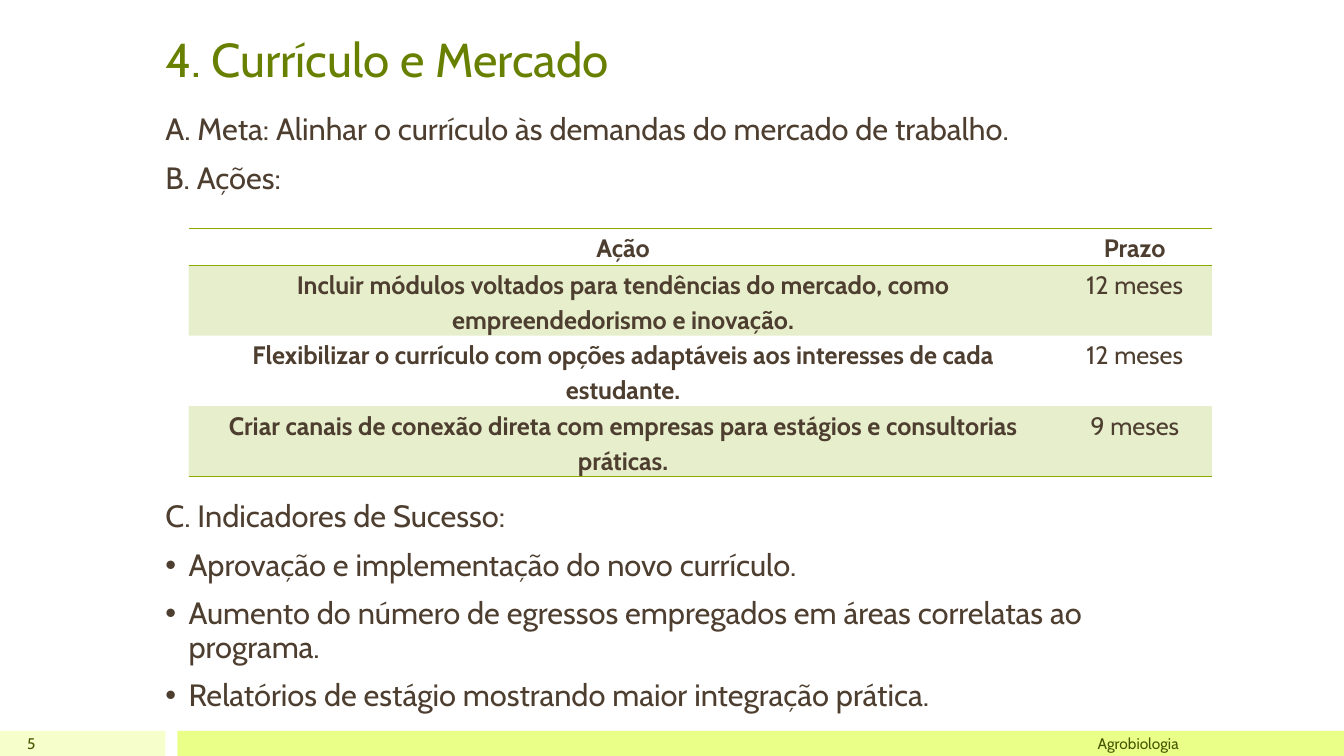
from dataclasses import dataclass

import lxml.etree
import pptx
import pptx.dml.color
import pptx.enum.shapes
import pptx.enum.text
import pptx.oxml.ns
import pptx.util

Inches = pptx.util.Inches
Pt = pptx.util.Pt
Align = pptx.enum.text.PP_ALIGN
Anchor = pptx.enum.text.MSO_ANCHOR
qn = pptx.oxml.ns.qn

FONT = "Cabin"
COLORS = {
    "title": "688000",
    "text": "4D3E2F",
    "footer": "455500",
    "rule": "8BAA00",
    "pale_bar": "F6FFCC",
    "bright_bar": "E9FF88",
}
NO_TABLE_STYLE = "{2D5ABB26-0587-4C30-8999-92F81FD0307C}"
FOOTER_TOP, FOOTER_HEIGHT = 7.25, 0.25


@dataclass
class FooterBar:
    left: float
    width: float
    color: str


@dataclass
class FooterLabel:
    text: str
    left: float
    width: float


@dataclass
class BodyLine:
    text: str
    bullet: bool = False
    space_before: float = 11


FOOTER_BARS = [FooterBar(0, 1.64, "pale_bar"), FooterBar(1.76, 11.57, "bright_bar")]
FOOTER_LABELS = [FooterLabel("5", 0, 0.45), FooterLabel("Agrobiologia", 1.79, 10)]
BODY_LINES = [
    BodyLine("A. Meta: Alinhar o currículo às demandas do mercado de trabalho."),
    BodyLine("B. Ações:"),
    BodyLine("C. Indicadores de Sucesso:", space_before=218),  # room for the table
    BodyLine("Aprovação e implementação do novo currículo.", bullet=True),
    BodyLine("Aumento do número de egressos empregados em áreas correlatas ao programa.", bullet=True),
    BodyLine("Relatórios de estágio mostrando maior integração prática.", bullet=True),
]
ACTION_ROWS = [
    ("Ação", "Prazo"),
    ("Incluir módulos voltados para tendências do mercado, como empreendedorismo e inovação.", "12 meses"),
    ("Flexibilizar o currículo com opções adaptáveis aos interesses de cada estudante.", "12 meses"),
    ("Criar canais de conexão direta com empresas para estágios e consultorias práticas.", "9 meses"),
]
COLUMN_WIDTHS = (8.62, 1.53)
HEADER_HEIGHT, ACTION_HEIGHT = 0.36, 0.7


def rgb(color: str) -> pptx.dml.color.RGBColor:
    return pptx.dml.color.RGBColor.from_string(COLORS[color])


def place(shape, left: float, top: float, width: float, height: float) -> None:
    shape.left, shape.top = Inches(left), Inches(top)
    shape.width, shape.height = Inches(width), Inches(height)


def add_run(paragraph, text: str, size: float, color: str, bold: bool = False) -> None:
    run = paragraph.add_run()
    run.text = text
    run.font.name = FONT
    run.font.size = Pt(size)
    run.font.bold = bold
    run.font.color.rgb = rgb(color)


def set_bullet(paragraph, bullet: bool) -> None:
    properties = paragraph._p.get_or_add_pPr()
    indent = Inches(0.23) if bullet else 0
    properties.set("marL", str(indent))
    properties.set("indent", str(-indent))
    if bullet:
        lxml.etree.SubElement(properties, qn("a:buFont"), typeface="Arial")
        lxml.etree.SubElement(properties, qn("a:buChar"), char="•")
    else:
        lxml.etree.SubElement(properties, qn("a:buNone"))


def add_rule(cell, side: str) -> None:
    """Draw the cell's border on one side: "T" or "B"."""
    line = lxml.etree.SubElement(cell._tc.get_or_add_tcPr(), qn(f"a:ln{side}"), w=str(Pt(1)))
    fill = lxml.etree.SubElement(line, qn("a:solidFill"))
    lxml.etree.SubElement(fill, qn("a:srgbClr"), val=COLORS["rule"])


def tint_cell(cell) -> None:
    """Fill the cell with the rule colour at 20% opacity."""
    cell.fill.solid()
    cell.fill.fore_color.rgb = rgb("rule")
    tint = cell._tc.tcPr.find(qn("a:solidFill")).find(qn("a:srgbClr"))
    lxml.etree.SubElement(tint, qn("a:alpha"), val="20000")


def add_footer_bar(slide, bar: FooterBar) -> None:
    strip = slide.shapes.add_shape(
        pptx.enum.shapes.MSO_SHAPE.RECTANGLE,
        Inches(bar.left), Inches(FOOTER_TOP), Inches(bar.width), Inches(FOOTER_HEIGHT))
    strip.shadow.inherit = False
    strip.fill.solid()
    strip.fill.fore_color.rgb = rgb(bar.color)
    strip.line.fill.background()


def add_footer_label(slide, label: FooterLabel) -> None:
    frame = slide.shapes.add_textbox(
        Inches(label.left), Inches(FOOTER_TOP), Inches(label.width), Inches(FOOTER_HEIGHT)).text_frame
    frame.word_wrap = True
    frame.vertical_anchor = Anchor.MIDDLE
    frame.paragraphs[0].alignment = Align.RIGHT
    add_run(frame.paragraphs[0], label.text, 11, "footer")


def fill_title(title) -> None:
    place(title, 1.54, 0.22, 4.73, 0.69)
    frame = title.text_frame
    frame.auto_size = pptx.enum.text.MSO_AUTO_SIZE.NONE
    frame.vertical_anchor = Anchor.BOTTOM
    frame.paragraphs[0].alignment = Align.LEFT
    add_run(frame.paragraphs[0], "4. Currículo e Mercado", 34, "title")


def fill_body(body) -> None:
    place(body, 1.54, 1.08, 10.25, 5.05)
    frame = body.text_frame
    frame.auto_size = pptx.enum.text.MSO_AUTO_SIZE.NONE
    frame.vertical_anchor = Anchor.TOP
    for index, line in enumerate(BODY_LINES):
        paragraph = frame.add_paragraph() if index else frame.paragraphs[0]
        paragraph.line_spacing = 0.9
        paragraph.space_before = Pt(line.space_before)
        set_bullet(paragraph, line.bullet)
        add_run(paragraph, line.text, 22, "text")


def add_action_table(slide) -> None:
    last = len(ACTION_ROWS) - 1
    actions = slide.shapes.add_table(
        len(ACTION_ROWS), len(COLUMN_WIDTHS), Inches(1.87), Inches(2.27),
        Inches(sum(COLUMN_WIDTHS)), Inches(HEADER_HEIGHT + last * ACTION_HEIGHT)).table
    actions.horz_banding = False
    actions._tbl.tblPr.find(qn("a:tableStyleId")).text = NO_TABLE_STYLE
    for column, width in zip(actions.columns, COLUMN_WIDTHS):
        column.width = Inches(width)
    for row, texts in enumerate(ACTION_ROWS):
        actions.rows[row].height = Inches(ACTION_HEIGHT if row else HEADER_HEIGHT)
        for column, text in enumerate(texts):
            cell = actions.cell(row, column)
            cell.margin_left = cell.margin_right = Inches(0.07)
            cell.margin_top = cell.margin_bottom = 0
            if row == 0:
                add_rule(cell, "T")
            if row in (0, last):
                add_rule(cell, "B")
            if row % 2:
                tint_cell(cell)
            else:
                cell.fill.background()
            paragraph = cell.text_frame.paragraphs[0]
            paragraph.alignment = Align.CENTER
            paragraph.line_spacing = 1.15
            paragraph.space_after = Pt(10)
            add_run(paragraph, text, 18, "text", bold=row == 0 or column == 0)


def main() -> None:
    presentation = pptx.Presentation()
    presentation.slide_width, presentation.slide_height = Inches(13.33), Inches(7.5)
    slide = presentation.slides.add_slide(presentation.slide_layouts[1])
    for bar in FOOTER_BARS:
        add_footer_bar(slide, bar)
    fill_title(slide.shapes.title)
    fill_body(slide.placeholders[1])
    for label in FOOTER_LABELS:
        add_footer_label(slide, label)
    add_action_table(slide)
    presentation.save("out.pptx")


if __name__ == "__main__":
    main()
